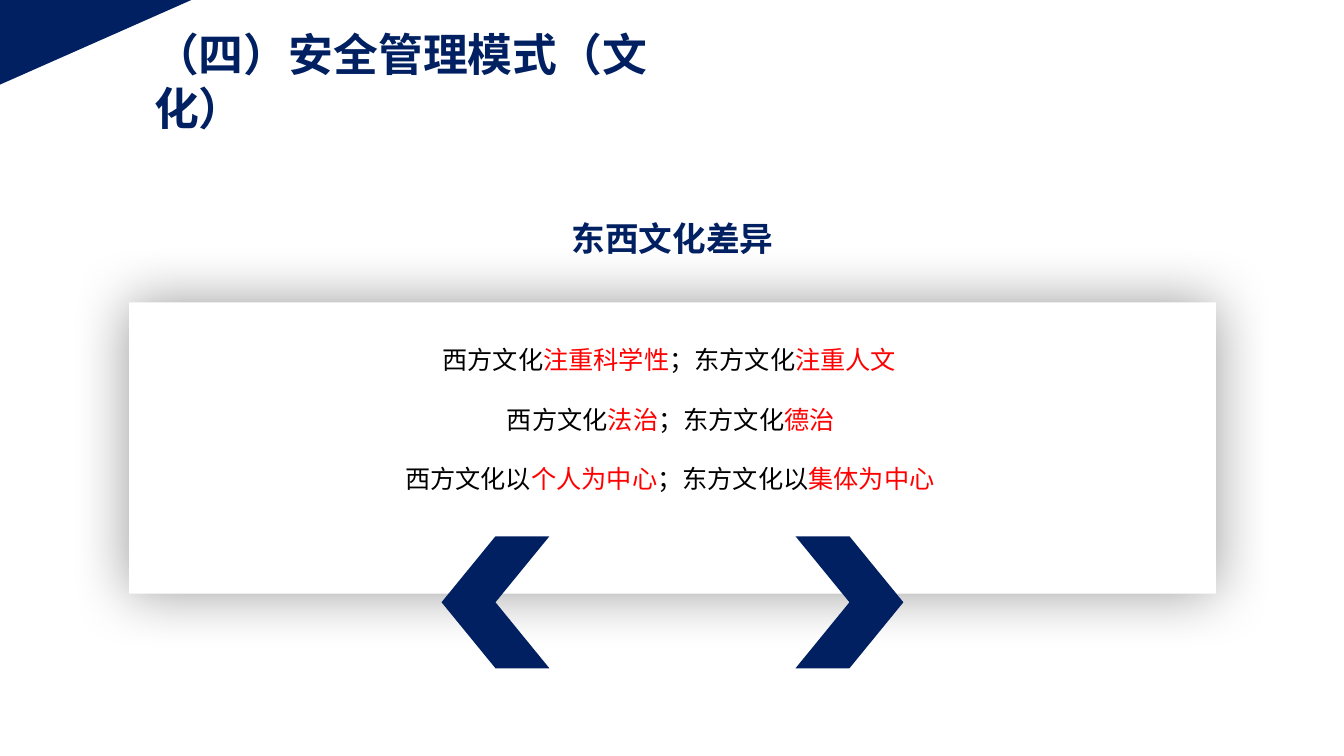
from lxml import etree
from pptx import Presentation
from pptx.dml.color import RGBColor
from pptx.enum.shapes import MSO_SHAPE
from pptx.enum.text import MSO_ANCHOR, PP_ALIGN
from pptx.oxml.ns import qn
from pptx.util import Inches, Pt

FONT = "Noto Sans CJK SC"
NAVY, RED, BLACK, WHITE = "012061", "FF0000", "000000", "FFFFFF"

deck = Presentation()
deck.slide_width, deck.slide_height = Inches(13.33), Inches(7.5)
slide = deck.slides.add_slide(deck.slide_layouts[6])


def add_block(preset, left, top, width, height, color, flip=None):
    block = slide.shapes.add_shape(
        preset, Inches(left), Inches(top), Inches(width), Inches(height))
    block.shadow.inherit = False
    block.fill.solid()
    block.fill.fore_color.rgb = RGBColor.from_string(color)
    block.line.fill.background()
    if flip:
        block._element.spPr.find(qn("a:xfrm")).set(flip, "1")
    return block


def add_text(left, top, width, height, runs, size, bold=False, wrap=False,
             align=PP_ALIGN.LEFT, anchor=MSO_ANCHOR.TOP):
    frame = slide.shapes.add_textbox(
        Inches(left), Inches(top), Inches(width), Inches(height)).text_frame
    frame.word_wrap = wrap
    frame.vertical_anchor = anchor
    paragraph = frame.paragraphs[0]
    paragraph.alignment = align
    for words, color in runs:
        run = paragraph.add_run()
        run.text = words
        run.font.size = Pt(size)
        run.font.bold = bold
        run.font.name = FONT
        run.font.color.rgb = RGBColor.from_string(color)
        etree.SubElement(run.font._element, qn("a:ea")).set("typeface", FONT)
    return paragraph


panel = add_block(MSO_SHAPE.RECTANGLE, 1.28, 3, 10.78, 2.89, WHITE)
effects = panel._element.spPr.find(qn("a:effectLst"))
glow = etree.SubElement(effects, qn("a:outerShdw"), blurRad=str(Pt(43)),
                        dist="0", dir="0", algn="ctr", rotWithShape="0")
glow_color = etree.SubElement(glow, qn("a:srgbClr"), val=BLACK)
etree.SubElement(glow_color, qn("a:alpha"), val="40000")

heading = add_text(1.43, 0.22, 5.98, 0.63, [("（四）安全管理模式（文化）", NAVY)],
                   32, bold=True, wrap=True)

add_block(MSO_SHAPE.RIGHT_TRIANGLE, 0, 0, 1.9, 0.84, NAVY, "flipV")
for left, flip in [(7.89, None), (4.38, "flipH")]:
    add_block(MSO_SHAPE.CHEVRON, left, 5.32, 1.07, 1.31, NAVY, flip)

contrasts = [
    (4.29, 4.7, "西方文化", "注重科学性", "；东方文化", "注重人文"),
    (4.93, 3.45, "西方文化", "法治", "；东方文化", "德治"),
    (3.92, 5.45, "西方文化以", "个人为中心", "；东方文化以", "集体为中心"),
]
for row, (left, width, *phrases) in enumerate(contrasts):
    add_text(left, 3.37 + 0.59 * row, width, 0.39,
             zip(phrases, [BLACK, RED, BLACK, RED]), 18)

add_text(5.21, 2.11, 2.92, 0.5, [("东西文化差异", NAVY)], 24, bold=True,
         wrap=True, align=PP_ALIGN.CENTER, anchor=MSO_ANCHOR.BOTTOM)

deck.save("out.pptx")
